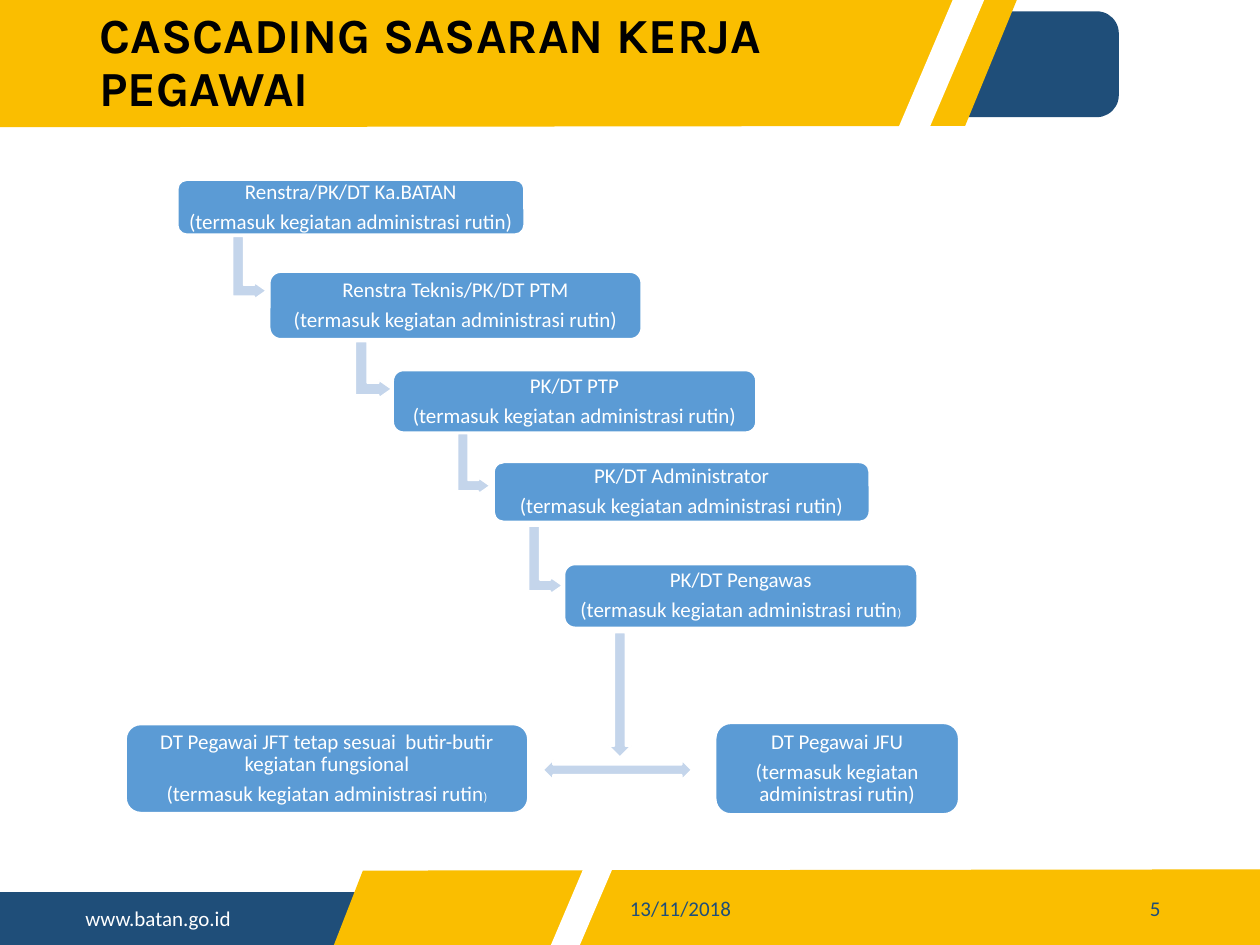
from dataclasses import dataclass

from pptx import Presentation
from pptx.dml.color import RGBColor
from pptx.enum.shapes import MSO_SHAPE
from pptx.enum.text import MSO_ANCHOR, MSO_AUTO_SIZE, PP_ALIGN
from pptx.util import Inches, Pt

ROUNDED = MSO_SHAPE.ROUNDED_RECTANGLE
BENT = MSO_SHAPE.BENT_UP_ARROW
DOWN = MSO_SHAPE.DOWN_ARROW
BOTH_WAYS = MSO_SHAPE.LEFT_RIGHT_ARROW
LEFT, CENTER, RIGHT = PP_ALIGN.LEFT, PP_ALIGN.CENTER, PP_ALIGN.RIGHT
TOP, MIDDLE = MSO_ANCHOR.TOP, MSO_ANCHOR.MIDDLE

NAVY = RGBColor(0x1F, 0x4E, 0x79)
YELLOW = RGBColor(0xFA, 0xBE, 0x00)
BLUE = RGBColor(0x5B, 0x9B, 0xD5)
PALE_BLUE = RGBColor(0xC4, 0xD5, 0xEB)
WHITE = RGBColor(0xFF, 0xFF, 0xFF)
BLACK = RGBColor(0, 0, 0)

ROUTINE = "(termasuk kegiatan administrasi rutin"


@dataclass(frozen=True)
class Frame:
    left: float
    top: float
    width: float
    height: float

    def lengths(self) -> tuple:
        return tuple(Inches(v) for v in (self.left, self.top, self.width, self.height))


@dataclass(frozen=True)
class Level:
    frame: Frame
    heading: str
    small_bracket: bool = False


@dataclass(frozen=True)
class Arrow:
    frame: Frame
    kind: MSO_SHAPE = BENT
    rotation: int = 90
    adjustments: tuple = (0.328, 0.25, 0.358)


LEVELS = [
    Level(Frame(1.41, 1.43, 2.75, 0.43), "Renstra/PK/DT Ka.BATAN"),
    Level(Frame(2.14, 2.16, 2.95, 0.53), "Renstra Teknis/PK/DT PTM"),
    Level(Frame(3.12, 2.94, 2.88, 0.49), "PK/DT PTP"),
    Level(Frame(3.92, 3.67, 2.98, 0.47), "PK/DT Administrator"),
    Level(Frame(4.48, 4.48, 2.8, 0.5), "PK/DT Pengawas", True),
    Level(Frame(1, 5.75, 3.19, 0.7),
          "DT Pegawai JFT tetap sesuai  butir-butir kegiatan fungsional", True),
    Level(Frame(5.68, 5.74, 1.93, 0.72), "DT Pegawai JFU"),
]
ARROWS = [
    Arrow(Frame(1.73, 1.99, 0.5, 0.27)),
    Arrow(Frame(2.74, 2.79, 0.45, 0.29)),
    Arrow(Frame(3.52, 3.55, 0.48, 0.26)),
    Arrow(Frame(4.06, 4.31, 0.54, 0.27)),
    Arrow(Frame(4.83, 5.02, 0.18, 0.99), DOWN, 0, ()),
    Arrow(Frame(4.31, 6.03, 1.18, 0.16), BOTH_WAYS, 0, ()),
]


def paint(shape, fill: RGBColor, outline: RGBColor | None = None) -> None:
    shape.shadow.inherit = False
    shape.fill.solid()
    shape.fill.fore_color.rgb = fill
    if outline is None:
        shape.line.fill.background()
    else:
        shape.line.color.rgb = outline
        shape.line.width = Pt(1)


def set_font(font, name: str, size: float, color: RGBColor) -> None:
    font.name = name
    font.size = Pt(size)
    font.color.rgb = color


def add_block(shapes, kind: MSO_SHAPE, frame: Frame, fill: RGBColor,
              outline: RGBColor | None = None, adjustments: tuple = ()):
    block = shapes.add_shape(kind, *frame.lengths())
    paint(block, fill, outline)
    for index, value in enumerate(adjustments):
        block.adjustments[index] = value
    return block


def add_polygon(shapes, points: list, fill: RGBColor) -> None:
    start, *rest = [(Inches(x), Inches(y)) for x, y in points]
    builder = shapes.build_freeform(*start, scale=1.0)
    builder.add_line_segments(rest, close=True)
    paint(builder.convert_to_shape(), fill)


def add_label(shapes, frame: Frame, text: str, color: RGBColor,
              alignment: PP_ALIGN = LEFT, anchor: MSO_ANCHOR = MIDDLE) -> None:
    text_frame = shapes.add_textbox(*frame.lengths()).text_frame
    text_frame.word_wrap = True
    text_frame.vertical_anchor = anchor
    paragraph = text_frame.paragraphs[0]
    paragraph.text = text
    paragraph.alignment = alignment
    set_font(paragraph.font, "Calibri", 12, color)


def add_level(shapes, level: Level) -> None:
    box = add_block(shapes, ROUNDED, level.frame, BLUE, WHITE, (0.167,))
    text_frame = box.text_frame
    text_frame.word_wrap = True
    text_frame.vertical_anchor = MIDDLE
    text_frame.margin_left = text_frame.margin_right = Inches(0.05)
    text_frame.margin_top = text_frame.margin_bottom = Inches(0.05)
    heading, note = text_frame.paragraphs[0], text_frame.add_paragraph()
    heading.text = level.heading
    if level.small_bracket:
        note.text = ROUTINE
        bracket = note.add_run()
        bracket.text = ")"
        bracket.font.size = Pt(7)
    else:
        note.text = ROUTINE + ")"
    for paragraph in (heading, note):
        paragraph.alignment = CENTER
        paragraph.line_spacing = 0.9
        paragraph.space_after = Pt(4.2)
        set_font(paragraph.font, "Calibri", 12, WHITE)


def add_background(shapes) -> None:
    add_block(shapes, MSO_SHAPE.RECTANGLE, Frame(0, 7.08, 2.97, 0.42), NAVY)
    add_polygon(shapes, [(2.88, 6.91), (10, 6.9), (10, 7.5), (2.65, 7.5)], YELLOW)
    add_block(shapes, ROUNDED, Frame(6.92, 0.09, 1.96, 0.84), NAVY, adjustments=(0.208,))
    add_polygon(shapes, [(0, 0), (8.07, 0), (7.66, 1), (0, 1.01)], YELLOW)
    add_label(shapes, Frame(0.58, 7.14, 2.04, 0.3), "www.batan.go.id", WHITE, anchor=TOP)
    add_polygon(shapes, [(7.57, -0.02), (7.82, -0.02), (4.59, 7.53), (4.36, 7.53)], WHITE)


def fill_title(slide) -> None:
    title = slide.shapes.title
    title.left, title.top, title.width, title.height = Frame(0.69, 0.09, 6.22, 0.84).lengths()
    text_frame = title.text_frame
    text_frame.text = "CASCADING SASARAN KERJA PEGAWAI"
    text_frame.word_wrap = True
    text_frame.auto_size = MSO_AUTO_SIZE.NONE
    text_frame.vertical_anchor = MIDDLE
    paragraph = text_frame.paragraphs[0]
    paragraph.alignment = LEFT
    paragraph.line_spacing = 0.9
    set_font(paragraph.font, "Karla", 28, BLACK)
    paragraph.font.bold = True
    # Bring the title in front of the banner.
    slide.shapes._spTree.append(title._element)


def main() -> None:
    presentation = Presentation()
    presentation.slide_width, presentation.slide_height = Inches(10), Inches(7.5)
    slide = presentation.slides.add_slide(presentation.slide_layouts[5])
    shapes = slide.shapes
    add_background(shapes)
    fill_title(slide)
    for arrow in ARROWS:
        drawn = add_block(shapes, arrow.kind, arrow.frame, PALE_BLUE, WHITE, arrow.adjustments)
        drawn.rotation = arrow.rotation
    for level in LEVELS:
        add_level(shapes, level)
    add_label(shapes, Frame(4.9, 7.01, 2.43, 0.4), "13/11/2018", NAVY)
    add_label(shapes, Frame(8.68, 7.01, 0.63, 0.4), "5", NAVY, RIGHT)
    presentation.save("out.pptx")


if __name__ == "__main__":
    main()
